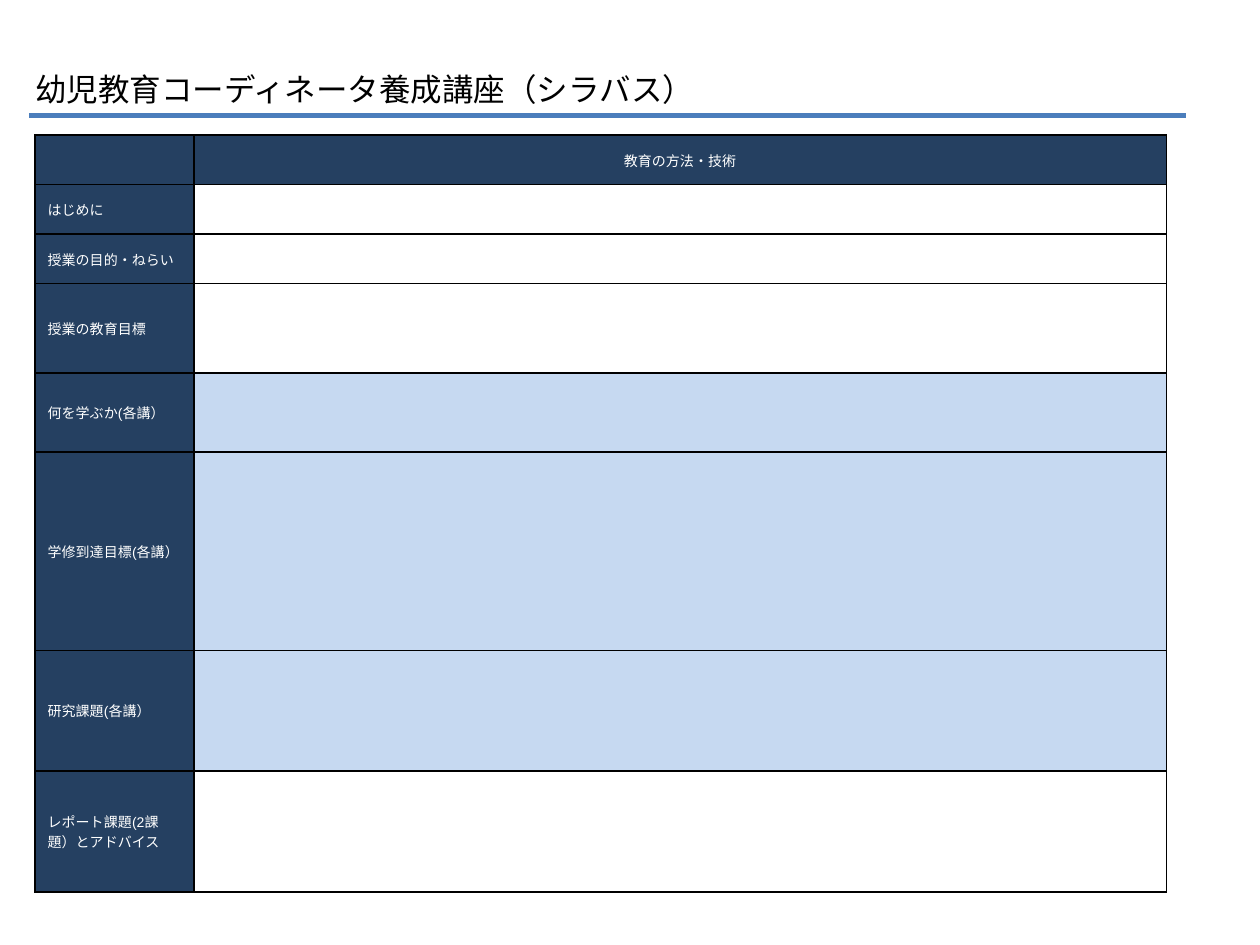
from lxml import etree
from pptx import Presentation
from pptx import util as u
from pptx.dml.color import RGBColor
from pptx.enum import shapes, text
from pptx.oxml import parse_xml
from pptx.oxml.ns import nsdecls, qn

NAVY, PALE, WHITE, BLACK, BLUE = "254061", "C6D9F1", "FFFFFF", "000000", "4B7EBC"
HEADER = "教育の方法・技術"
COLUMNS = (90.75, 555.75)
HEADER_HEIGHT = 28.3
# label, row height, fill of the content cell
ROWS = [
    ("はじめに", 28.3, None),
    ("授業の目的・ねらい", 28.3, None),
    ("授業の教育目標", 51, None),
    ("何を学ぶか(各講）", 45.2, PALE),
    ("学修到達目標(各講）", 113.4, PALE),
    ("研究課題(各講）", 69, PALE),
    ("レポート課題(2課題）とアドバイス", 69, None),
]


def rgb(value):
    return RGBColor.from_string(value)


def add_run(p, content, size, font, color):
    r = p.add_run()
    r.text = content
    r.font.size = u.Pt(size)
    r.font.name = font
    r.font.color.rgb = rgb(color)


def add_title(s, content):
    sp = s.shapes.add_textbox(u.Pt(13), u.Pt(36.7), u.Pt(669), u.Pt(51))
    tf = sp.text_frame
    tf.word_wrap = True
    add_run(tf.paragraphs[0], content, 18, "Calibri", BLACK)


def add_rule(s, left, right, y):
    line = s.shapes.add_connector(
        shapes.MSO_CONNECTOR.STRAIGHT, u.Pt(left), u.Pt(y), u.Pt(right), u.Pt(y))
    line.line.color.rgb = rgb(BLUE)
    line.line.width = u.Pt(3)
    etree.SubElement(line._element.spPr, qn("a:effectLst"))


def set_borders(cell):
    props = cell._tc.get_or_add_tcPr()
    for i, side in enumerate(("lnL", "lnR", "lnT", "lnB")):
        props.insert(i, parse_xml(
            f'<a:{side} {nsdecls("a")} w="{u.Pt(1)}"><a:solidFill>'
            f'<a:srgbClr val="{BLACK}"/></a:solidFill></a:{side}>'))


def fill_cell(cell, content="", fill=None, align=text.PP_ALIGN.LEFT):
    if fill:
        cell.fill.solid()
        cell.fill.fore_color.rgb = rgb(fill)
    else:
        cell.fill.background()
    set_borders(cell)
    cell.vertical_anchor = text.MSO_ANCHOR.MIDDLE
    p = cell.text_frame.paragraphs[0]
    p.alignment = align
    if content:
        add_run(p, content, 8, "Arial", WHITE)
    else:
        # Keep empty cells from stretching their row
        etree.SubElement(p._p, qn("a:endParaRPr"), sz="800")


def add_syllabus(s):
    heights = [HEADER_HEIGHT] + [height for _, height, _ in ROWS]
    frame = s.shapes.add_table(
        len(heights), len(COLUMNS), u.Pt(20), u.Pt(77.2),
        u.Pt(sum(COLUMNS)), u.Pt(sum(heights)))
    table = frame.table
    for column, width in zip(table.columns, COLUMNS):
        column.width = u.Pt(width)
    for row, height in zip(table.rows, heights):
        row.height = u.Pt(height)

    # Header row
    fill_cell(table.cell(0, 0), fill=NAVY)
    fill_cell(table.cell(0, 1), HEADER, NAVY, text.PP_ALIGN.CENTER)

    # Labels with blank content cells
    for i, (label, _, fill) in enumerate(ROWS, start=1):
        fill_cell(table.cell(i, 0), label, NAVY)
        fill_cell(table.cell(i, 1), fill=fill)


def main():
    prs = Presentation()
    prs.slide_width, prs.slide_height = u.Pt(720), u.Pt(540)
    s = prs.slides.add_slide(prs.slide_layouts[6])
    add_title(s, "幼児教育コーディネータ養成講座（シラバス）")
    add_rule(s, 16.6, 677.5, 66)
    add_syllabus(s)
    prs.save("out.pptx")


if __name__ == "__main__":
    main()
